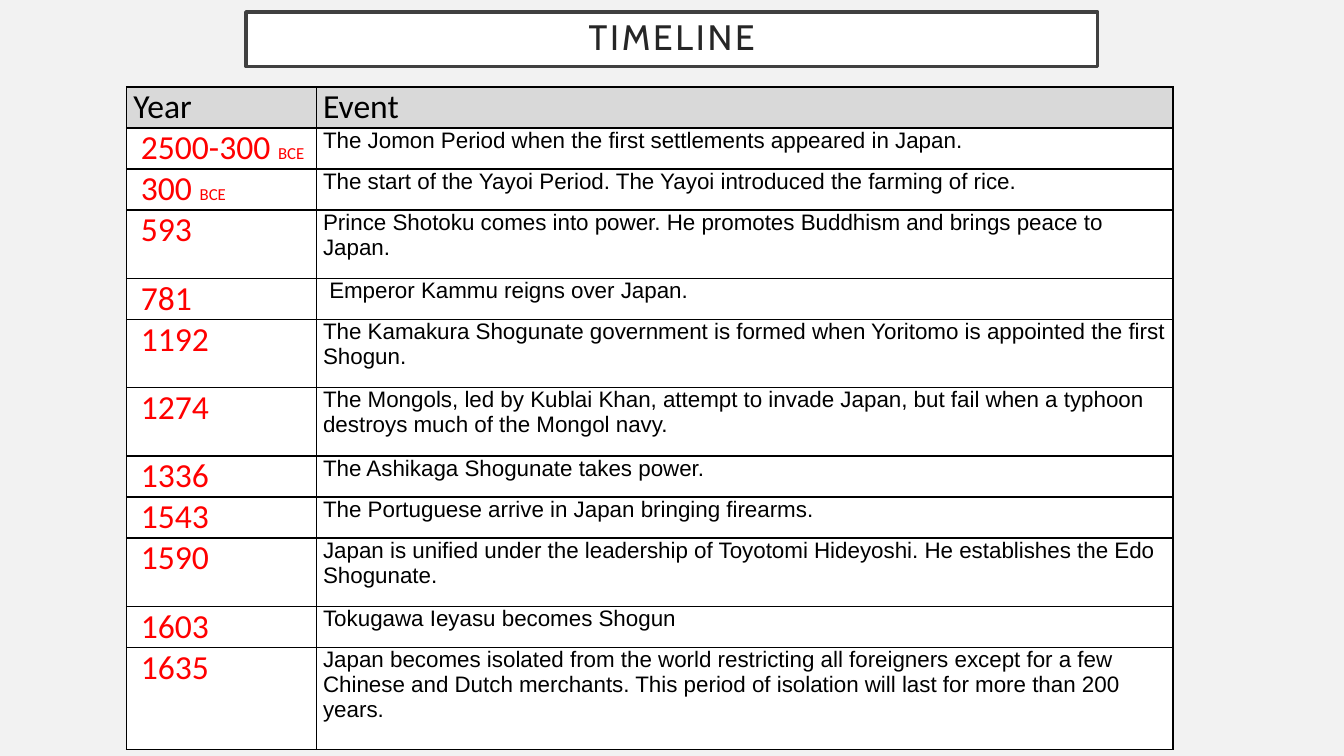
from lxml.etree import SubElement
from pptx import Presentation
from pptx.dml.color import RGBColor
from pptx.enum.shapes import MSO_SHAPE
from pptx.enum.text import MSO_ANCHOR, PP_ALIGN
from pptx.oxml.ns import qn
from pptx.util import Pt

COLORS = {"bg": "F2F2F2", "white": "FFFFFF", "frame": "404040", "title": "262626",
          "header": "D9D9D9", "black": "000000", "year": "FF0000"}
TITLE = "TIMELINE"
HEADER = ("Year", "Event")
EVENTS = [
    ("2500-300", "BCE", 1, "The Jomon Period when the first settlements appeared in Japan."),
    ("300", "BCE", 1, "The start of the Yayoi Period. The Yayoi introduced the farming of rice."),
    ("593", "", 2, "Prince Shotoku comes into power. He promotes Buddhism and brings peace to Japan."),
    ("781", "", 1, " Emperor Kammu reigns over Japan."),
    ("1192", "", 2, "The Kamakura Shogunate government is formed when Yoritomo is appointed the first Shogun."),
    ("1274", "", 2, "The Mongols, led by Kublai Khan, attempt to invade Japan, but fail when a typhoon "
                    "destroys much of the Mongol navy."),
    ("1336", "", 1, "The Ashikaga Shogunate takes power."),
    ("1543", "", 1, "The Portuguese arrive in Japan bringing firearms."),
    ("1590", "", 2, "Japan is unified under the leadership of Toyotomi Hideyoshi. He establishes the Edo "
                    "Shogunate."),
    ("1603", "", 1, "Tokugawa Ieyasu becomes Shogun"),
    ("1635", "", 3, "Japan becomes isolated from the world restricting all foreigners except for a few "
                    "Chinese and Dutch merchants. This period of isolation will last for more than 200 years."),
]
TABLE_LEFT, TABLE_TOP = 90.4, 62.1
COL_WIDTHS = (135.5, 612)
LINE_HEIGHT = 24.4
MARGIN, YEAR_INDENT = 4.9, 5.4


def rgb(name):
    return RGBColor.from_string(COLORS[name])


def add_run(p, text, size, font, color):
    r = p.add_run()
    r.text = text
    r.font.size = Pt(size)
    r.font.name = font
    r.font.color.rgb = rgb(color)
    return r


def add_borders(cell):
    tc_pr = cell._tc.get_or_add_tcPr()
    for i, side in enumerate(("lnL", "lnR", "lnT", "lnB")):
        ln = SubElement(tc_pr, qn(f"a:{side}"), w=str(Pt(1)))
        fill = SubElement(ln, qn("a:solidFill"))
        SubElement(fill, qn("a:srgbClr"), val=COLORS["black"])
        tc_pr.insert(i, ln)


def fill_cell(cell, fill, runs, indent=0):
    cell.fill.solid()
    cell.fill.fore_color.rgb = rgb(fill)
    cell.margin_left, cell.margin_right = Pt(MARGIN + indent), Pt(MARGIN)
    cell.margin_top = cell.margin_bottom = Pt(0)
    add_borders(cell)
    for run in runs:
        add_run(cell.text_frame.paragraphs[0], *run)


def add_title(s):
    sp = s.shapes.add_shape(MSO_SHAPE.RECTANGLE, Pt(175.7), Pt(8.6), Pt(608.4), Pt(38.9))
    sp.shadow.inherit = False
    sp.fill.solid()
    sp.fill.fore_color.rgb = rgb("white")
    sp.line.color.rgb = rgb("frame")
    sp.line.width = Pt(2.5)
    tf = sp.text_frame
    tf.word_wrap = True
    tf.vertical_anchor = MSO_ANCHOR.MIDDLE
    tf.margin_left = tf.margin_right = Pt(14.4)
    tf.margin_top = tf.margin_bottom = Pt(0)
    p = tf.paragraphs[0]
    p.alignment = PP_ALIGN.CENTER
    p.line_spacing = 0.9
    r = add_run(p, TITLE, 25.2, "Cabin", "title")
    r.font._element.set("spc", "200")


def add_timeline(s):
    lines = [1] + [event[2] for event in EVENTS]
    table = s.shapes.add_table(len(lines), len(COL_WIDTHS), Pt(TABLE_LEFT), Pt(TABLE_TOP),
                               Pt(sum(COL_WIDTHS)), Pt(LINE_HEIGHT * sum(lines))).table
    for col, width in zip(table.columns, COL_WIDTHS):
        col.width = Pt(width)
    for row, count in zip(table.rows, lines):
        row.height = Pt(LINE_HEIGHT * count)
    for col, text in enumerate(HEADER):
        fill_cell(table.cell(0, col), "header", [(text, 24, "Calibri", "black")])
    for row, (year, era, _, event) in enumerate(EVENTS, 1):
        runs = [(f"{year} " if era else year, 24, "Calibri", "year")]
        if era:
            runs.append((era, 12, "Calibri", "year"))
        fill_cell(table.cell(row, 0), "white", runs, YEAR_INDENT)
        fill_cell(table.cell(row, 1), "white", [(event, 16, "Arial", "black")])


def main():
    prs = Presentation()
    prs.slide_width, prs.slide_height = Pt(960), Pt(540)
    s = prs.slides.add_slide(prs.slide_layouts[6])
    s.background.fill.solid()
    s.background.fill.fore_color.rgb = rgb("bg")
    add_title(s)
    add_timeline(s)
    prs.save("out.pptx")


if __name__ == "__main__":
    main()
